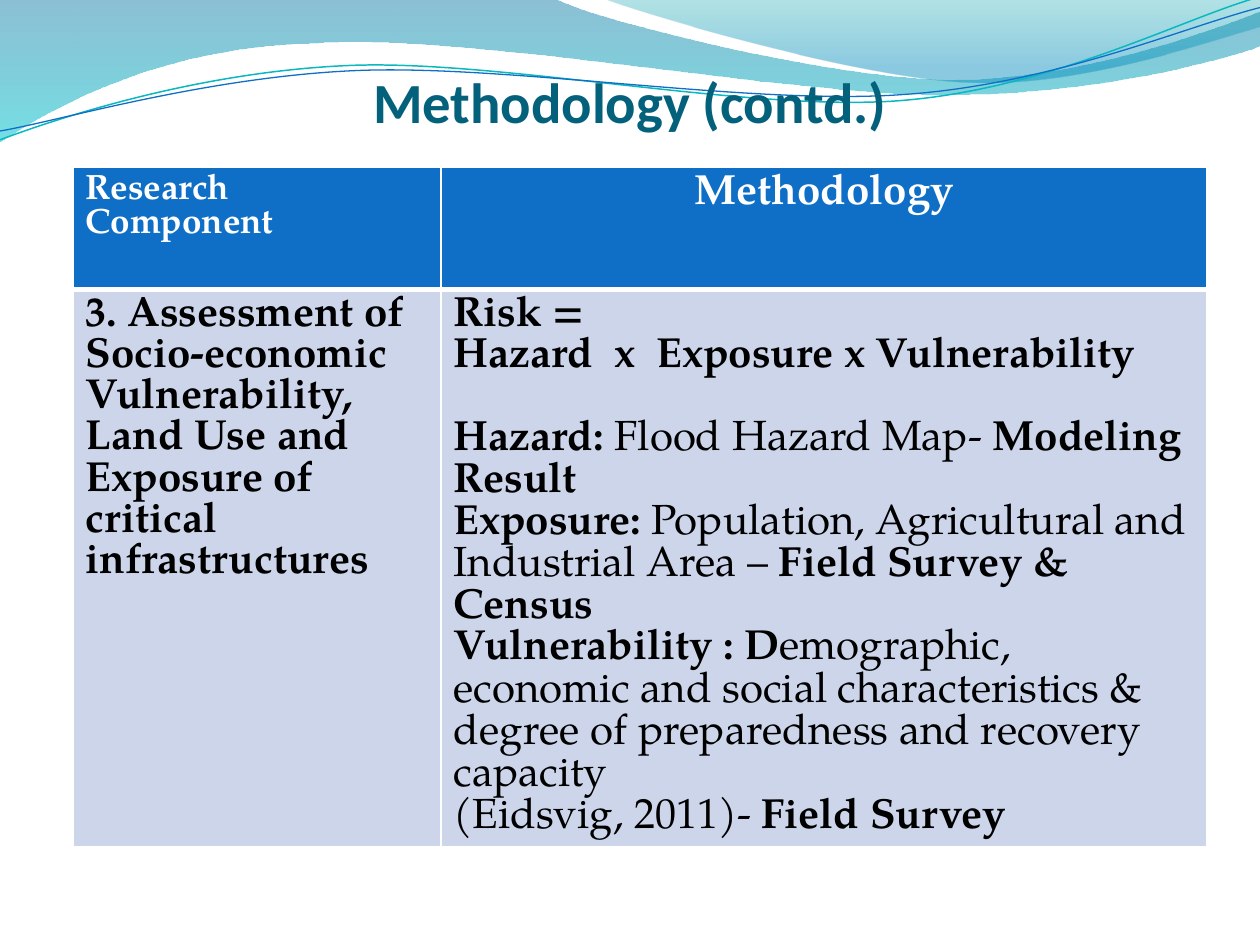
from math import cos, radians, sin
from lxml.etree import SubElement
from pptx import Presentation
from pptx.dml.color import RGBColor
from pptx.enum.text import MSO_ANCHOR, PP_ALIGN
from pptx.oxml import parse_xml
from pptx.oxml.ns import nsdecls, qn
from pptx.util import Inches, Pt

COLORS = {
    "title": "04617B", "blue": "0F6FC6", "teal": "0AB8BF", "pale": "CCD5EA",
    "white": "FFFFFF", "black": "000000", "deep": "0074A1", "aqua": "00C6CF",
    "sea": "00A1A9", "sky": "008BBF",
}
SERIF = "TeX Gyre Pagella"
TILT = 357.3

BAND = [[(0, 0)], [(4.4, -0.01)],
        [(4.76, 0.17), (6.64, 0.63), (7.58, 0.63)],
        [(8.53, 0.63), (9.58, 0.26), (10, 0.09)], [(10.01, 0.36)],
        [(9.83, 0.44), (8.7, 0.76), (7.46, 0.75)],
        [(6.22, 0.75), (3.82, 0.28), (2.57, 0.34)],
        [(1.29, 0.36), (0.46, 0.83), (-0.01, 1.13)]]
CREST = [[(4.79, -0.01)], [(5.09, 0.11), (6.82, 0.62), (7.69, 0.65)],
         [(8.56, 0.69), (9.61, 0.32), (10, 0.21)], [(10, 0)]]
UPPER = [[(0, 1.11)], [(0.48, 0.93), (1.58, 0.57), (2.77, 0.52)],
         [(3.95, 0.47), (5.93, 0.89), (7.13, 0.8)],
         [(8.33, 0.71), (9.38, 0.15), (9.98, -0.02)]]
LOWER = [[(0, 1.04)], [(0.47, 0.96), (1.64, 0.61), (2.83, 0.56)],
         [(4.03, 0.51), (5.97, 0.84), (7.17, 0.75)],
         [(8.36, 0.67), (9.41, 0.21), (10, 0.06)]]

TOPIC = [[("3. Assessment of Socio-economic Vulnerability, Land Use and "
           "Exposure of critical infrastructures", True)]]
METHOD = [
    [("Risk =", True)],
    [("Hazard  x  Exposure x Vulnerability", True)],
    [("Hazard: ", True), ("Flood Hazard Map- ", False),
     ("Modeling Result", True)],
    [("Exposure: ", True),
     ("Population, Agricultural and Industrial Area – ", False),
     ("Field Survey & Census", True)],
    [("Vulnerability : D", True),
     ("emographic, economic and social characteristics & degree of "
      "preparedness and recovery capacity", False)],
    [("(Eidsvig, 2011)- ", False), ("Field Survey", True)],
]


def color(name):
    """Return the named colour."""
    return RGBColor.from_string(COLORS[name])


def style(run, face, size, name, bold=True):
    """Set the font of a run."""
    font = run.font
    font.name, font.size, font.bold = face, Pt(size), bold
    font.color.rgb = color(name)


def level(route, mid=(4.99, 0.57)):
    """Turn a tilted route back to level about its middle."""
    turn = radians(360 - TILT)

    def spin(x, y):
        """Turn one point."""
        x, y = x - mid[0], y - mid[1]
        return (mid[0] + x * cos(turn) - y * sin(turn),
                mid[1] + x * sin(turn) + y * cos(turn))

    return [[spin(*point) for point in part] for part in route]


def add_curve(slide, route, close):
    """Draw a route of straight and cubic parts as a freeform."""
    parts = [[(Inches(x), Inches(y)) for x, y in part] for part in route]
    build = slide.shapes.build_freeform(*parts[0][0])
    build.add_line_segments([part[-1] for part in parts[1:]], close=close)
    shape = build.convert_to_shape()
    shape.shadow.inherit = False
    lines = list(shape._element.iter(qn("a:lnTo")))
    for line, part in zip(lines, parts[1:]):
        if len(part) == 3:
            dots = "".join(f'<a:pt x="{x - shape.left}" y="{y - shape.top}"/>'
                           for x, y in part)
            bend = parse_xml(
                f'<a:cubicBezTo {nsdecls("a")}>{dots}</a:cubicBezTo>')
            line.getparent().replace(line, bend)
    return shape


def add_wave(slide, route, stops):
    """Draw a closed wave with a clear downward gradient."""
    shape = add_curve(slide, route, True)
    shape.line.fill.background()
    shape.fill.gradient()
    shape.fill.gradient_angle = 270
    for stop, (place, name, _) in zip(shape.fill.gradient_stops, stops):
        stop.position = place
        stop.color.rgb = color(name)
    tints = list(shape._element.spPr.iter(qn("a:srgbClr")))
    for tint, (_, _, alpha) in zip(tints, stops):
        SubElement(tint, qn("a:alpha")).set("val", str(alpha * 1000))


def add_line(slide, route, name, width):
    """Draw an open tilted curve."""
    shape = add_curve(slide, level(route), False)
    shape.rotation = TILT
    shape.fill.background()
    shape.line.color.rgb = color(name)
    shape.line.width = Pt(width)


def add_title(slide, text):
    """Fill the title and bring it in front of the waves."""
    title = slide.shapes.title
    title.left, title.top = Inches(0.5), Inches(0.42)
    title.width, title.height = Inches(9), Inches(0.65)
    frame = title.text_frame
    frame.text = text
    frame.vertical_anchor = MSO_ANCHOR.BOTTOM
    frame.margin_left = frame.margin_right = frame.margin_bottom = 0
    para = frame.paragraphs[0]
    para.alignment = PP_ALIGN.CENTER
    style(para.runs[0], "Calibri", 32.4, "title")
    slide.shapes._spTree.append(title._element)


def edge(cell, sides):
    """Give a cell white borders of the given widths."""
    for spot, (side, width) in enumerate(sides.items()):
        line = parse_xml(
            f'<a:ln{side} {nsdecls("a")} w="{Pt(width)}"><a:solidFill>'
            f'<a:srgbClr val="{COLORS["white"]}"/></a:solidFill></a:ln{side}>')
        cell._tc.get_or_add_tcPr().insert(spot, line)


def fill_cell(cell, paras, size, ink, back, sides):
    """Write rich paragraphs into a cell and paint it."""
    cell.fill.solid()
    cell.fill.fore_color.rgb = color(back)
    edge(cell, sides)
    frame = cell.text_frame
    for spot, pieces in enumerate(paras):
        para = frame.add_paragraph() if spot else frame.paragraphs[0]
        for text, bold in pieces:
            run = para.add_run()
            run.text = text
            style(run, SERIF, size, ink, bold)


def add_grid(slide):
    """Add the table of components and methods."""
    table = slide.shapes.add_table(
        2, 2, Inches(0.58), Inches(1.33), Inches(9), Inches(5.38)).table
    for col, width in zip(table.columns, (2.92, 6.08)):
        col.width = Inches(width)
    for row, height in zip(table.rows, (0.97, 4.41)):
        row.height = Inches(height)
    head = {"L": 1, "R": 1, "T": 1, "B": 3}
    body = {"L": 1, "R": 1, "T": 3, "B": 1}
    labels = (("Research  Component", 20), ("Methodology", 24))
    for col, (text, size) in enumerate(labels):
        fill_cell(table.cell(0, col), [[(text, True)]], size, "white", "blue", head)
    for col, paras in enumerate((TOPIC, METHOD)):
        fill_cell(table.cell(1, col), paras, 24, "black", "pale", body)
    table.cell(0, 1).text_frame.paragraphs[0].alignment = PP_ALIGN.CENTER
    table.cell(1, 1).text_frame.paragraphs[2].space_before = Pt(24)


def main():
    """Build the slide and save it."""
    deck = Presentation()
    deck.slide_width, deck.slide_height = Inches(10), Inches(7.5)
    slide = deck.slides.add_slide(deck.slide_layouts[5])
    add_wave(slide, BAND, ((0, "deep", 45), (1, "aqua", 55)))
    add_wave(slide, CREST, ((0, "sea", 30), (0.8, "sky", 45)))
    add_line(slide, UPPER, "teal", 0.85)
    add_line(slide, LOWER, "blue", 0.75)
    add_title(slide, "Methodology (contd.)")
    add_grid(slide)
    deck.save("out.pptx")


if __name__ == "__main__":
    main()
